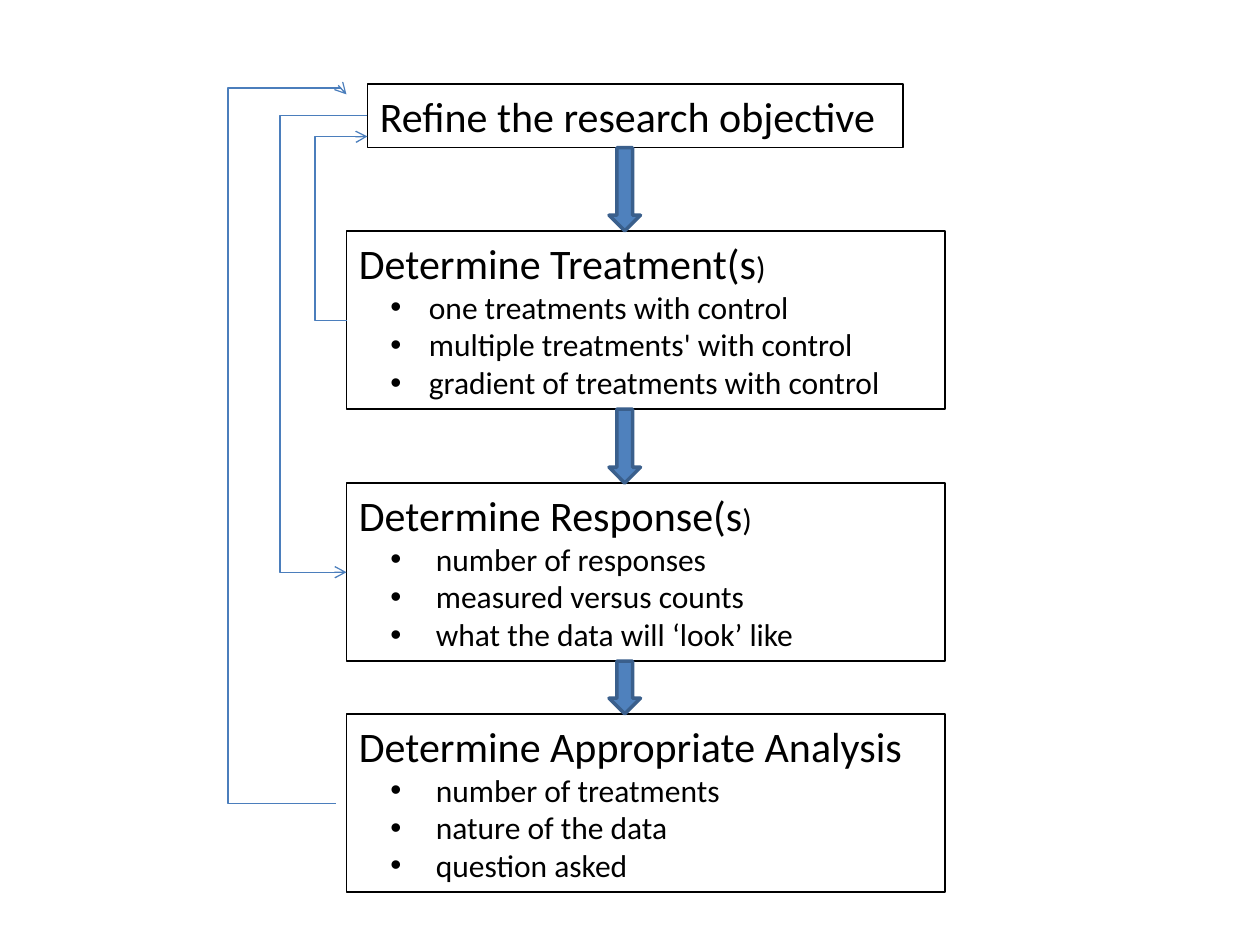
from lxml import etree
from pptx import Presentation
from pptx.dml.color import RGBColor
from pptx.enum.shapes import MSO_CONNECTOR, MSO_SHAPE
from pptx.enum.text import MSO_ANCHOR, PP_ALIGN
from pptx.oxml.ns import qn
from pptx.util import Pt

ELBOW = MSO_CONNECTOR.ELBOW
RECTANGLE, DOWN_ARROW = MSO_SHAPE.RECTANGLE, MSO_SHAPE.DOWN_ARROW
TOP, LEFT = MSO_ANCHOR.TOP, PP_ALIGN.LEFT

BLACK = RGBColor(0x00, 0x00, 0x00)
ARROW_FILL = RGBColor(0x4F, 0x81, 0xBD)
ARROW_EDGE = RGBColor(0x3A, 0x5F, 0x8C)
LOOP_BLUE = RGBColor(0x4B, 0x7E, 0xBC)

FONT = "Calibri"
HEADING_SIZE, BODY_SIZE = 24, 18
BULLET_LEFT = 18
ARROW_CENTER, ARROW_WIDTH = 357, 18


def add_text(para, text, size):
    span = para.add_run()
    span.text = text
    span.font.name = FONT
    span.font.size = Pt(size)
    span.font.color.rgb = BLACK


def set_bullet(para, margin):
    """Hang a round bullet at BULLET_LEFT, with the text at margin."""
    props = para._p.get_or_add_pPr()
    props.set("marL", str(Pt(margin)))
    props.set("indent", str(Pt(BULLET_LEFT - margin)))
    etree.SubElement(props, qn("a:buFont"), typeface="Arial")
    etree.SubElement(props, qn("a:buChar"), char="•")


deck = Presentation()
deck.slide_width, deck.slide_height = Pt(720), Pt(540)
page = deck.slides.add_slide(deck.slide_layouts[6])

# Steps: left, top, width, height, heading, small closing mark, text margin, bullets
steps = [
    (210, 48, 306, 36.4, "Refine the research objective", "", 0, []),
    (198, 132, 342, 101.8, "Determine Treatment(s", ")", 40,
     ["one treatments with control", "multiple treatments' with control",
      "gradient of treatments with control"]),
    (198, 276, 342, 101.8, "Determine Response(s", ")", 44,
     ["number of responses", "measured versus counts",
      "what the data will ‘look’ like"]),
    (198, 408, 342, 101.8, "Determine Appropriate Analysis", "", 44,
     ["number of treatments", "nature of the data", "question asked"]),
]
for left, top, width, height, heading, mark, margin, bullets in steps:
    box = page.shapes.add_shape(RECTANGLE, Pt(left), Pt(top), Pt(width), Pt(height))
    box.shadow.inherit = False
    box.fill.background()
    box.line.color.rgb = BLACK
    box.line.width = Pt(0.75)
    frame = box.text_frame
    frame.word_wrap = True
    frame.vertical_anchor = TOP
    para = frame.paragraphs[0]
    para.alignment = LEFT
    add_text(para, heading, HEADING_SIZE)
    if mark:
        add_text(para, mark, BODY_SIZE)
    for bullet in bullets:
        para = frame.add_paragraph()
        para.alignment = LEFT
        para.level = 1
        set_bullet(para, margin)
        add_text(para, bullet, BODY_SIZE)

# Feedback loops: start, end, x of the vertical lane, y of the last lane (if any)
loops = [
    ((198, 183), (210, 78), 180, 78.2),
    ((210, 66), (198, 327), 160, None),
    ((192, 459), (198, 54), 130.5, 50.4),
]
for (x1, y1), (x2, y2), lane_x, lane_y in loops:
    loop = page.shapes.add_connector(ELBOW, Pt(x1), Pt(y1), Pt(x2), Pt(y2))
    loop.line.color.rgb = LOOP_BLUE
    loop.line.width = Pt(0.75)
    etree.SubElement(loop.line._get_or_add_ln(), qn("a:tailEnd"), type="arrow")
    props = loop._element.spPr
    etree.SubElement(props, qn("a:effectLst"))
    bends = [(lane_x - x1) / (x2 - x1)]
    if lane_y is not None:
        bends.append((lane_y - y1) / (y2 - y1))
    geometry = props.find(qn("a:prstGeom"))
    geometry.set("prst", f"bentConnector{len(bends) + 2}")
    guides = geometry.find(qn("a:avLst"))
    for number, bend in enumerate(bends, 1):
        etree.SubElement(guides, qn("a:gd"), name=f"adj{number}",
                         fmla=f"val {round(bend * 100000)}")

# Block arrows fill the gap between each step and the next
for upper, lower in zip(steps, steps[1:]):
    start = upper[1] + upper[3]
    arrow = page.shapes.add_shape(DOWN_ARROW, Pt(ARROW_CENTER - ARROW_WIDTH / 2),
                                  Pt(start), Pt(ARROW_WIDTH), Pt(lower[1] - start))
    arrow.shadow.inherit = False
    arrow.fill.solid()
    arrow.fill.fore_color.rgb = ARROW_FILL
    arrow.line.color.rgb = ARROW_EDGE
    arrow.line.width = Pt(2)

deck.save("out.pptx")
